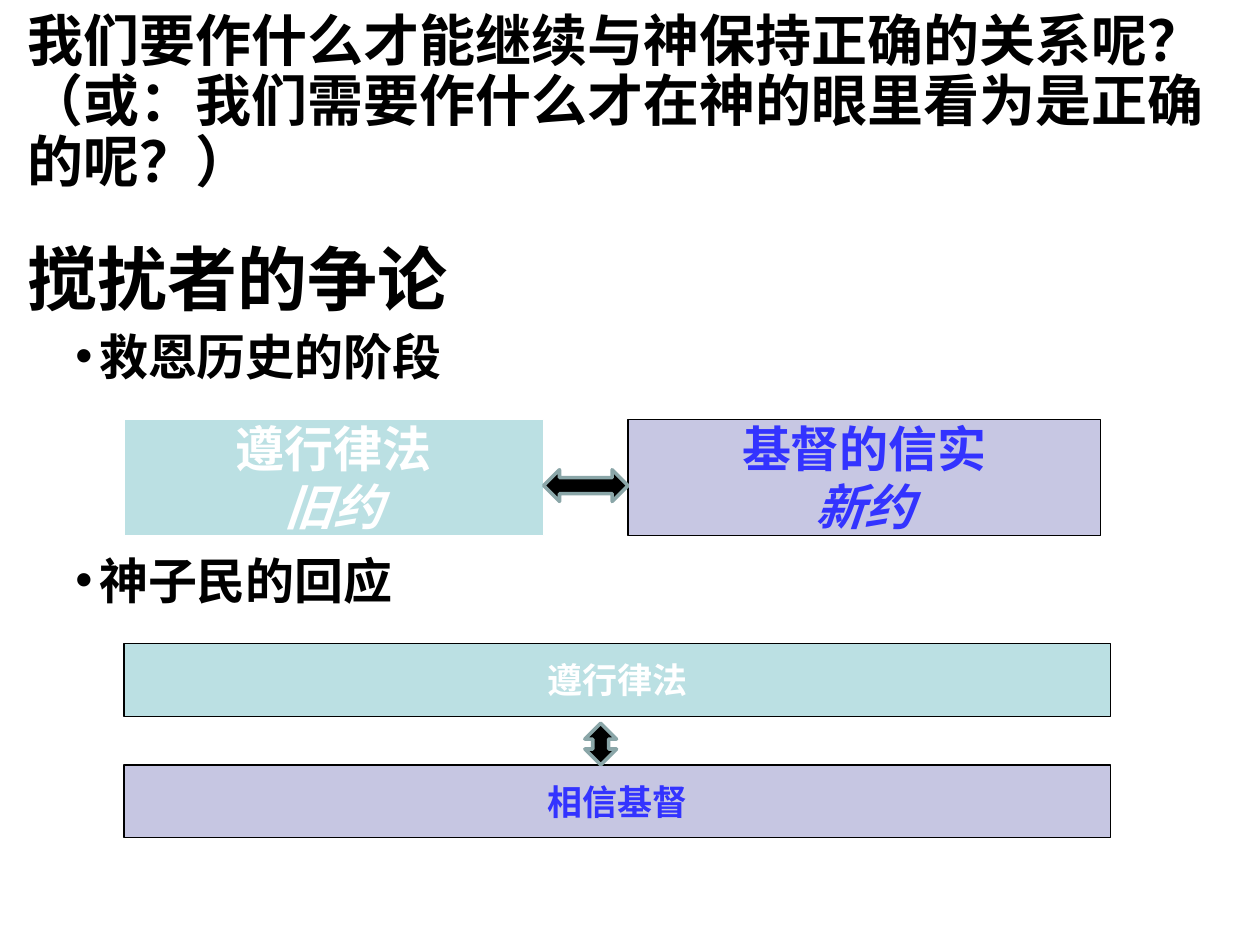
from lxml import etree
from pptx import Presentation
from pptx.dml.color import RGBColor
from pptx.enum.shapes import MSO_SHAPE
from pptx.enum.text import MSO_ANCHOR, MSO_AUTO_SIZE, PP_ALIGN
from pptx.oxml.ns import qn
from pptx.util import Cm, Pt

RECT = MSO_SHAPE.RECTANGLE
LEFT_RIGHT, UP_DOWN = MSO_SHAPE.LEFT_RIGHT_ARROW, MSO_SHAPE.UP_DOWN_ARROW
MIDDLE, TOP = MSO_ANCHOR.MIDDLE, MSO_ANCHOR.TOP
LEFT, CENTER = PP_ALIGN.LEFT, PP_ALIGN.CENTER
NO_FIT = MSO_AUTO_SIZE.NONE

THEME = {
    "black": "000000", "white": "FFFFFF", "teal": "BBE0E3",
    "navy": "333399", "blue": "3333FF", "arrow_line": "8AA6A8",
    "heading": 40, "question": 32, "point": 28, "label": 20,
    "sc": "Noto Sans CJK SC", "jp": "Noto Sans CJK JP", "latin": "Arial",
}


def add_line(p, text, size, color, font="jp", italic=False, **para):
    """Fill one paragraph with a bold run and set its paragraph format."""
    for name, value in para.items():
        setattr(p, name, value)
    r = p.add_run()
    r.text = text
    look = {"size": Pt(THEME[size]), "bold": True, "italic": italic, "name": THEME[font]}
    for name, value in look.items():
        setattr(r.font, name, value)
    r.font.color.rgb = RGBColor.from_string(THEME[color])
    ea = etree.SubElement(r.font._element, qn("a:ea"))
    ea.set("typeface", THEME["jp" if font == "latin" else font])


def add_block(kind, box, fill, line, width, alpha=None):
    """Add a filled and outlined shape, see-through if alpha is given."""
    sp = s.shapes.add_shape(kind, *map(Cm, box))
    sp.shadow.inherit = False
    sp.fill.solid()
    sp.fill.fore_color.rgb = RGBColor.from_string(THEME[fill])
    if alpha:
        clr = sp.fill._xPr.find(qn("a:solidFill"))[0]
        etree.SubElement(clr, qn("a:alpha")).set("val", str(alpha * 1000))
    sp.line.color.rgb = RGBColor.from_string(THEME[line])
    sp.line.width = Pt(width)
    return sp


prs = Presentation()
prs.slide_width, prs.slide_height = Cm(25.4), Cm(19.05)
s = prs.slides.add_slide(prs.slide_layouts[5])

# Title: the question and the heading
title = s.shapes.title
title.left, title.top, title.width, title.height = map(Cm, (0.3, 1.98, 25.1, 2.74))
tf = title.text_frame
for name, value in {"word_wrap": True, "auto_size": NO_FIT, "vertical_anchor": MIDDLE}.items():
    setattr(tf, name, value)
TITLE = [
    ("我们要作什么才能继续与神保持正确的关系呢？", "question", "sc", 34.3, 0),
    ("（或：我们需要作什么才在神的眼里看为是正确的呢？）", "question", "sc", 34.3, 0),
    ("搅扰者的争论", "heading", "jp", 43, 29),
]
for i, (text, size, font, spacing, before) in enumerate(TITLE):
    p = tf.add_paragraph() if i else tf.paragraphs[0]
    add_line(p, text, size, "black", font, alignment=LEFT,
             line_spacing=Pt(spacing), space_before=Pt(before))

# Bulleted points, spaced to leave room for the first pair of boxes
tf = s.shapes.add_textbox(Cm(1.27), Cm(6.58), Cm(22.86), Cm(10.39)).text_frame
for name, value in {"word_wrap": True, "auto_size": NO_FIT, "vertical_anchor": TOP}.items():
    setattr(tf, name, value)
for i, text in enumerate(["救恩历史的阶段", "神子民的回应"]):
    p = tf.add_paragraph() if i else tf.paragraphs[0]
    add_line(p, text, "point", "black", line_spacing=Pt(30), space_before=Pt(98 * i))
    pPr = p._p.get_or_add_pPr()
    pPr.set("marL", str(Cm(0.48)))
    pPr.set("indent", str(-Cm(0.48)))
    etree.SubElement(pPr, qn("a:buFont")).set("typeface", THEME["latin"])
    etree.SubElement(pPr, qn("a:buChar")).set("char", "•")

# Contrasted boxes: position, fill, outline, opacity, text colour, size, font, lines
BOXES = [
    ((2.5, 8.46, 8.46, 2.34), "teal", "white", None, "white", "point", "jp", ["遵行律法", "旧约"]),
    ((12.66, 8.46, 9.53, 2.34), "navy", "black", 27, "blue", "point", "latin", ["基督的信实", "新约"]),
    ((2.5, 12.98, 19.89, 1.47), "teal", "black", None, "white", "label", "jp", ["遵行律法"]),
    ((2.5, 15.42, 19.89, 1.47), "navy", "black", 28, "blue", "label", "jp", ["相信基督"]),
]
for box, fill, line, alpha, color, size, font, lines in BOXES:
    tf = add_block(RECT, box, fill, line, 0.75, alpha).text_frame
    tf.word_wrap = False
    tf.vertical_anchor = MIDDLE
    for i, text in enumerate(lines):
        p = tf.add_paragraph() if i else tf.paragraphs[0]
        add_line(p, text, size, color, font, italic=i > 0, alignment=CENTER,
                 line_spacing=Pt(THEME[size] * 1.18))

# Double arrows between the boxes
for kind, box in [(LEFT_RIGHT, (10.96, 9.47, 1.7, 0.64)), (UP_DOWN, (11.79, 14.58, 0.64, 0.84))]:
    add_block(kind, box, "black", "arrow_line", 2)

prs.save("out.pptx")
